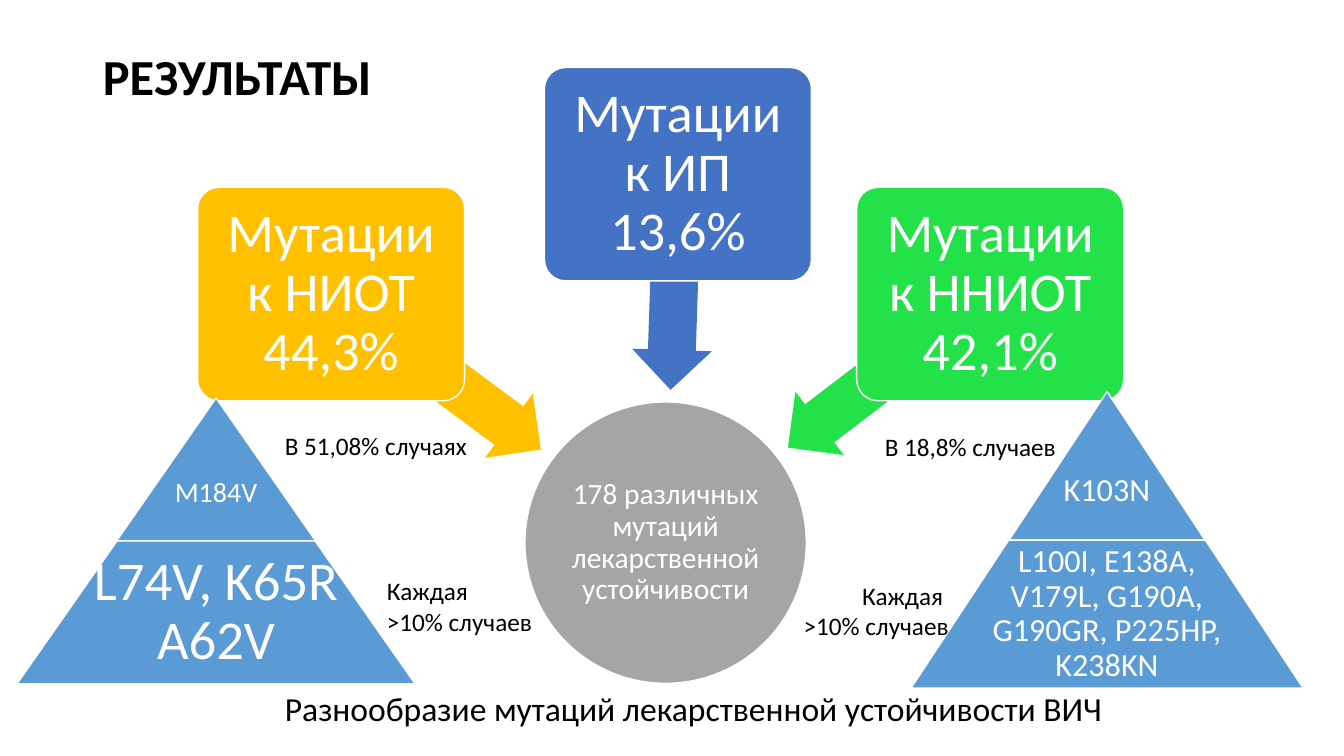
from dataclasses import dataclass

from pptx import Presentation
from pptx.dml.color import RGBColor
from pptx.enum.shapes import MSO_SHAPE
from pptx.enum.text import MSO_ANCHOR, MSO_AUTO_SIZE, PP_ALIGN
from pptx.util import Cm, Pt


@dataclass(frozen=True)
class Theme:
    font: str = "Calibri"
    dark: str = "000000"
    light: str = "FFFFFF"
    gray: str = "A5A5A5"
    gold: str = "FFC000"
    green: str = "23E148"
    blue: str = "4472C4"
    sky: str = "5B9BD5"
    title: int = 36
    large: int = 39
    foot: int = 24
    tier: int = 23
    hub: int = 21
    small: int = 20
    note: int = 18


THEME = Theme()


def write(shape, text, size, color=THEME.light, bold=False, align=PP_ALIGN.CENTER,
          anchor=MSO_ANCHOR.MIDDLE, wrap=True, space=0.9, inset=None, low=0):
    """Fill a shape with text; low is extra room in cm under the text."""
    frame = shape.text_frame
    frame.word_wrap = wrap
    frame.vertical_anchor = anchor
    if inset is not None:
        frame.margin_left = frame.margin_right = frame.margin_top = Cm(inset)
        frame.margin_bottom = Cm(inset + low)
    para = frame.paragraphs[0]
    para.text = text
    para.alignment = align
    para.line_spacing = space
    for run in para.runs:
        font = run.font
        font.name, font.size, font.bold = THEME.font, Pt(size), bold
        font.color.rgb = RGBColor.from_string(color)


def draw(slide, kind, left, top, width, height, fill, adjust=(), edge=True):
    """Add a filled preset shape, sized in cm."""
    shape = slide.shapes.add_shape(kind, Cm(left), Cm(top), Cm(width), Cm(height))
    shape.shadow.inherit = False
    shape.fill.solid()
    shape.fill.fore_color.rgb = RGBColor.from_string(fill)
    if edge:
        shape.line.color.rgb = RGBColor.from_string(THEME.light)
        shape.line.width = Pt(1)
    else:
        shape.line.fill.background()
    for i, value in enumerate(adjust):
        shape.adjustments[i] = value
    return shape


def label(slide, text, left, top, width, height, size=THEME.note, align=PP_ALIGN.LEFT):
    box = slide.shapes.add_textbox(Cm(left), Cm(top), Cm(width), Cm(height))
    write(box, text, size, color=THEME.dark, align=align, anchor=MSO_ANCHOR.TOP,
          wrap=False, space=1.0)
    box.text_frame.auto_size = MSO_AUTO_SIZE.SHAPE_TO_FIT_TEXT


def branch(slide, text, fill, left, top, arrow, turn):
    """Add a class of mutations and its arrow to the hub."""
    head = draw(slide, MSO_SHAPE.LEFT_ARROW, *arrow, 2.01, fill, (0.6, 0.5), edge=False)
    head.rotation = turn
    card = draw(slide, MSO_SHAPE.ROUNDED_RECTANGLE, left, top, 6.73, 5.38, fill, (0.1,))
    write(card, text, THEME.large, inset=0.2)


def pyramid(slide, left, top, width, height, slope, peak, base):
    """Stack two tiers; the upper one is half as wide."""
    tiers = ((left + width / 4, top, width / 2), (left, top + height, width))
    upper, lower = (draw(slide, MSO_SHAPE.TRAPEZOID, x, y, w, height, THEME.sky, (slope,))
                    for x, y, w in tiers)
    write(upper, *peak, wrap=False, inset=0.08)
    write(lower, *base, inset=0.08, low=height / 6)


def main():
    deck = Presentation()
    deck.slide_width, deck.slide_height = Cm(33.87), Cm(19.05)
    slide = deck.slides.add_slide(deck.slide_layouts[5])

    # Title
    title = slide.shapes.title
    title.left, title.top, title.width, title.height = Cm(2.34), Cm(1.02), Cm(29.21), Cm(1.93)
    write(title, "РЕЗУЛЬТАТЫ", THEME.title, color=THEME.dark, bold=True, align=PP_ALIGN.LEFT)

    # Hub and the three classes around it
    hub = draw(slide, MSO_SHAPE.OVAL, 13.23, 10.13, 7.09, 7.09, THEME.gray)
    write(hub, "178 различных мутаций лекарственной устойчивости", THEME.hub, inset=0.03)
    branch(slide, "Мутации к НИОТ 44,3%", THEME.gold, 4.98, 4.72, (7.7, 8.36, 6.58), 216.6)
    branch(slide, "Мутации к ННИОТ 42,1%", THEME.green, 21.59, 4.72, (19.2, 8.33, 6.4), 322.6)
    branch(slide, "Мутации к ИП 13,6%", THEME.blue, 13.72, 1.7, (14.27, 6.1, 5.44), 271.9)

    # Pyramids of frequent mutations
    pyramid(slide, 0.43, 10.03, 10.03, 3.6, 0.7,
            ("M184V", THEME.small), ("L74V, K65R A62V", THEME.large))
    pyramid(slide, 22.96, 9.88, 9.88, 3.73, 0.66, ("K103N", THEME.tier),
            ("L100I, E138A, V179L, G190A, G190GR, P225HP, K238KN", THEME.tier))

    # Notes and caption
    label(slide, "В 51,08% случаях", 6.93, 10.72, 5.16, 1.02)
    label(slide, "Каждая\n>10% случаев", 9.5, 14.38, 4.22, 1.8)
    label(slide, "В 18,8% случаев", 22.05, 10.74, 5.03, 1.02)
    label(slide, "Каждая \n>10% случаев", 19.94, 14.5, 4.22, 1.8, align=PP_ALIGN.RIGHT)
    label(slide, "Разнообразие мутаций лекарственной устойчивости ВИЧ",
          6.93, 17.22, 21.31, 1.27, size=THEME.foot)

    deck.save("out.pptx")


if __name__ == "__main__":
    main()
